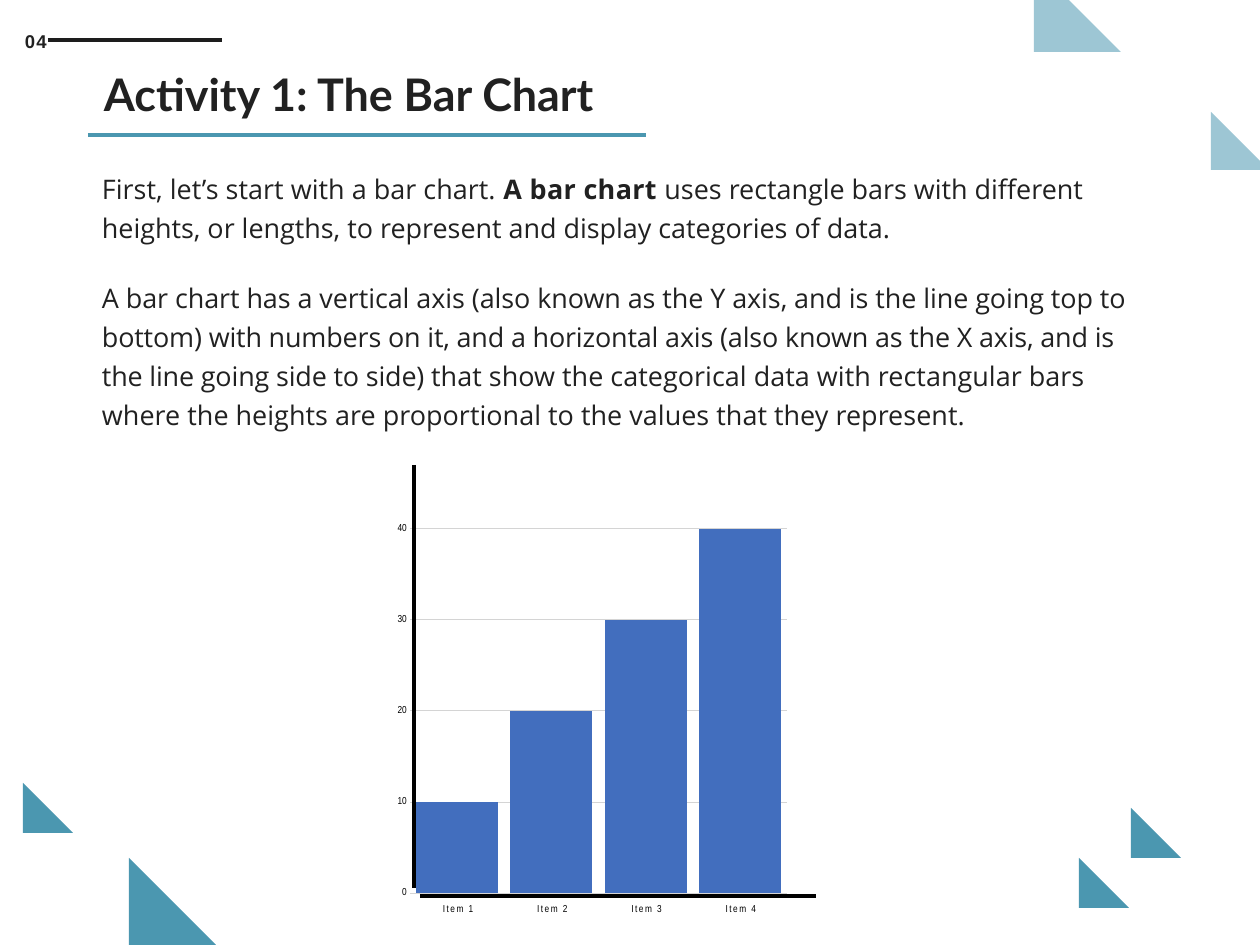
from lxml import etree
from pptx import Presentation
from pptx.chart.data import CategoryChartData
from pptx.dml.color import RGBColor
from pptx.enum.chart import XL_CHART_TYPE, XL_TICK_LABEL_POSITION, XL_TICK_MARK
from pptx.enum.shapes import MSO_CONNECTOR, MSO_SHAPE
from pptx.oxml import parse_xml
from pptx.oxml.ns import nsdecls, qn
from pptx.util import Pt

COLUMNS = XL_CHART_TYPE.COLUMN_CLUSTERED
NO_LABELS = XL_TICK_LABEL_POSITION.NONE
NO_TICKS = XL_TICK_MARK.NONE
STRAIGHT = MSO_CONNECTOR.STRAIGHT
RIGHT_TRIANGLE = MSO_SHAPE.RIGHT_TRIANGLE

TEAL = RGBColor(0x4B, 0x97, 0xB0)
INK = RGBColor(0x21, 0x21, 0x21)
RULE_INK = RGBColor(0x1D, 0x1D, 0x1D)
BLACK = RGBColor(0, 0, 0)
BAR_BLUE = RGBColor(0x42, 0x6E, 0xBE)
GRID_GREY = RGBColor(0xD4, 0xD4, 0xD4)

# Content: lengths in px
EMU_PER_PX = 11321
SLIDE_SIZE = (1260, 945)

# Each text: box, font, size, colour, line spacing, space before later
# paragraphs, then paragraphs of (text, bold, letter spacing in points)
TEXTS = [
    ((24, 29, 26, 23), "Arial", 16.5, INK, 1, 0, [[("04", True, 1.1)]]),
    ((103, 66, 544, 56), "Lato", 40, INK, 1, 0,
     [[("Activity 1: The Bar Chart", True, 0)]]),
    ((101, 165, 1053, 266), "Open Sans", 24, INK, 1.2, 28.5, [
        [("First, let’s start with a bar chart. ", False, 0.05),
         ("A bar chart ", True, 0.3),
         ("uses rectangle bars with different heights, or lengths, to "
          "represent and display categories of data.", False, 0)],
        [("A bar chart has a vertical axis (also known as the Y axis, and is "
          "the line going top to ", False, -0.05),
         ("bottom) with numbers on it, and a horizontal "
          "axis (also known as the X axis, and is the line going side to "
          "side) ", False, -0.15),
         ("that show the categorical data with rectangular bars where the "
          "heights are proportional to the values that they represent.",
          False, 0.05)],
    ]),
]

# Left, top, side
TRIANGLES = [(129, 858, 87), (1131, 808, 50), (23, 783, 50), (1079, 858, 50)]
CUT_TRIANGLES = [
    [(1034, 0), (1069, 0), (1121, 52), (1034, 52)],
    [(1211, 112), (1260, 161), (1260, 170), (1211, 170)],
]
CUT_ALPHA = 54

# Start x, start y, end x, end y, colour
HEADER_RULES = [(48, 40, 222, 40, RULE_INK), (88, 135, 646, 135, TEAL)]
AXIS_RULES = [(414, 465, 414, 888, BLACK), (420, 896, 816, 896, BLACK)]
RULE_WIDTH = 4

BAR_VALUES = {"Item 1": 10, "Item 2": 20, "Item 3": 30, "Item 4": 40}
CHART_BOX = (380, 455, 450, 480)
PLOT_BOX = (410, 465, 377, 428)
VALUE_MAX, VALUE_STEP, BAR_GAP = 47, 10, 15
CHART_FONT, CHART_FONT_SIZE = "Arial Narrow", 9
LABEL_INDENT, LABEL_TOP, LABEL_WIDTH, LABEL_HEIGHT = 32, 901, 60, 15


def px(*lengths):
    return [round(length * EMU_PER_PX) for length in lengths]


def paint(shape, color):
    shape.fill.solid()
    shape.fill.fore_color.rgb = color
    shape.line.fill.background()
    shape.shadow.inherit = False


def add_rule(shapes, x1, y1, x2, y2, color):
    rule = shapes.add_connector(STRAIGHT, *px(x1, y1, x2, y2))
    rule.line.color.rgb = color
    rule.line.width = px(RULE_WIDTH)[0]
    etree.SubElement(rule._element.spPr, qn("a:effectLst"))


def add_text(shapes, box, font, size, color, line_spacing, gap, paragraphs):
    frame = shapes.add_textbox(*px(*box)).text_frame
    frame.word_wrap = True
    frame.margin_left = frame.margin_top = px(1)[0]
    frame.margin_right = frame.margin_bottom = 0
    for index, runs in enumerate(paragraphs):
        paragraph = frame.add_paragraph() if index else frame.paragraphs[0]
        paragraph.line_spacing = line_spacing
        paragraph.space_before = Pt(gap if index else 1)
        for text, bold, spacing in runs:
            run = paragraph.add_run()
            run.text = text
            run.font.name = font
            run.font.size = Pt(size)
            run.font.bold = bold
            run.font.color.rgb = color
            run._r.get_or_add_rPr().set("spc", str(round(spacing * 100)))


def add_bar_chart(shapes):
    data = CategoryChartData()
    data.categories = list(BAR_VALUES)
    data.add_series("Value", list(BAR_VALUES.values()))
    chart = shapes.add_chart(COLUMNS, *px(*CHART_BOX), data).chart
    chart.has_legend = chart.has_title = False
    chart.font.name = CHART_FONT
    chart.font.size = Pt(CHART_FONT_SIZE)
    chart.font.color.rgb = BLACK

    plot = chart.plots[0]
    plot.gap_width = BAR_GAP
    plot.vary_by_categories = False
    fill = plot.series[0].format.fill
    fill.solid()
    fill.fore_color.rgb = BAR_BLUE

    category_axis, value_axis = chart.category_axis, chart.value_axis
    for axis in (category_axis, value_axis):
        axis.major_tick_mark = NO_TICKS
        axis.format.line.fill.background()
    category_axis.tick_label_position = NO_LABELS
    value_axis.minimum_scale = 0
    value_axis.maximum_scale = VALUE_MAX
    value_axis.major_unit = VALUE_STEP
    grid = value_axis.major_gridlines.format.line
    grid.color.rgb = GRID_GREY
    grid.width = Pt(0.5)

    # Fixed place of the plot area inside the chart
    left, top, width, height = CHART_BOX
    plot_left, plot_top, plot_width, plot_height = PLOT_BOX
    parts = {"x": (plot_left - left) / width, "y": (plot_top - top) / height,
             "w": plot_width / width, "h": plot_height / height}
    modes = '<c:layoutTarget val="inner"/><c:xMode val="edge"/><c:yMode val="edge"/>'
    sizes = "".join(f'<c:{name} val="{part:.4f}"/>' for name, part in parts.items())
    layout = parse_xml(f'<c:layout {nsdecls("c")}><c:manualLayout>{modes}{sizes}'
                       '</c:manualLayout></c:layout>')
    plot_area = chart._chartSpace.chart.plotArea
    for old_layout in plot_area.findall(qn("c:layout")):
        plot_area.remove(old_layout)
    plot_area.insert(0, layout)


def add_item_labels(shapes):
    plot_left, _, plot_width, _ = PLOT_BOX
    pitch = plot_width / len(BAR_VALUES)
    for index, item in enumerate(BAR_VALUES):
        left = plot_left + index * pitch + LABEL_INDENT
        add_text(shapes, (left, LABEL_TOP, LABEL_WIDTH, LABEL_HEIGHT), CHART_FONT,
                 CHART_FONT_SIZE, BLACK, 1, 0, [[(item, False, 1.3)]])


def main():
    presentation = Presentation()
    presentation.slide_width, presentation.slide_height = px(*SLIDE_SIZE)
    shapes = presentation.slides.add_slide(presentation.slide_layouts[6]).shapes

    # Corner triangles
    for left, top, side in TRIANGLES:
        paint(shapes.add_shape(RIGHT_TRIANGLE, *px(left, top, side, side)), TEAL)
    for start, *others in CUT_TRIANGLES:
        builder = shapes.build_freeform(*start, scale=EMU_PER_PX)
        builder.add_line_segments(others)
        triangle = builder.convert_to_shape()
        paint(triangle, TEAL)
        color = triangle._element.spPr.find(qn("a:solidFill"))[0]
        etree.SubElement(color, qn("a:alpha")).set("val", str(CUT_ALPHA * 1000))

    # Page number, title and explanation
    for text in TEXTS:
        add_text(shapes, *text)
    for rule in HEADER_RULES:
        add_rule(shapes, *rule)

    # Bar chart with its heavy axes and the labels below them
    add_bar_chart(shapes)
    for rule in AXIS_RULES:
        add_rule(shapes, *rule)
    add_item_labels(shapes)

    presentation.save("out.pptx")


if __name__ == "__main__":
    main()
